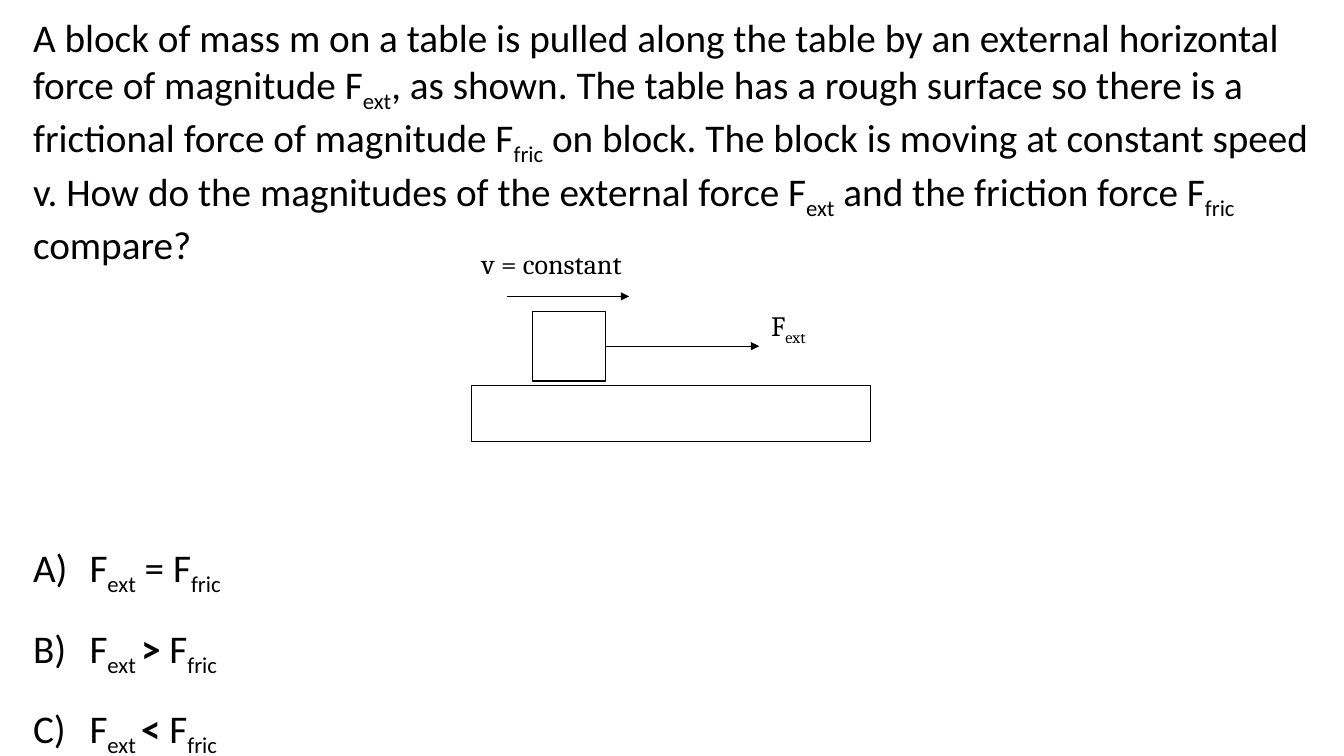
from lxml.etree import SubElement
from pptx import Presentation
from pptx.dml.color import RGBColor
from pptx.enum.shapes import MSO_CONNECTOR, MSO_SHAPE
from pptx.enum.text import MSO_AUTO_SIZE
from pptx.oxml.ns import qn
from pptx.util import Inches, Pt

# Content: each run is (text, style)
PLAIN, SUB, BOLD = "plain", "sub", "bold"
QUESTION = [
    ("A block of mass m on a table is pulled along the table by an external "
     "horizontal force of magnitude F", PLAIN),
    ("ext", SUB),
    (", as shown. The table has a rough surface so there is a frictional "
     "force of magnitude F", PLAIN),
    ("fric", SUB),
    (" on block. The block is moving at constant speed v. How do the "
     "magnitudes of the external force F", PLAIN),
    ("ext", SUB),
    (" and the friction force F", PLAIN),
    ("fric", SUB),
    (" compare?", PLAIN),
]
ANSWERS = [
    [("F", PLAIN), ("ext", SUB), (" = F", PLAIN), ("fric", SUB)],
    [("F", PLAIN), ("ext ", SUB), (">", BOLD), (" F", PLAIN), ("fric", SUB)],
    [("F", PLAIN), ("ext ", SUB), ("<", BOLD), (" F", PLAIN), ("fric", SUB)],
]
FORCE_LABEL = [("F", PLAIN), ("ext", SUB)]
SPEED_LABEL = [("v = constant", PLAIN)]

# Places: left, top, width, height
QUESTION_BOX = (0.23, 0.08, 12.87, 2.46)
ANSWER_BOX = (0.23, 5.08, 9.83, 2.22)
TABLE_TOP = (4.68, 3.82, 3.95, 0.56)
BLOCK = (5.28, 3.09, 0.73, 0.69)
FORCE_BOX = (7.55, 3.01, 0.98, 0.63)
SPEED_BOX = (4.68, 2.4, 3.17, 0.63)
FORCE_END = 7.53
SPEED_START, SPEED_END, SPEED_Y = 5.03, 6.24, 2.94

BLACK, WHITE = "000000", "FFFFFF"
LINE_WIDTH = Pt(0.75)
ANSWER_INDENT = Inches(0.56)


def color(hex_code):
    return RGBColor.from_string(hex_code)


def add_text(shapes, place, paragraphs, font, size):
    box = shapes.add_textbox(*map(Inches, place))
    frame = box.text_frame
    frame.word_wrap = True
    for index, runs in enumerate(paragraphs):
        paragraph = frame.paragraphs[0] if index == 0 else frame.add_paragraph()
        for text, style in runs:
            run = paragraph.add_run()
            run.text = text
            run.font.name = font
            run.font.size = Pt(size)
            run.font.bold = style == BOLD
            run.font.color.rgb = color(BLACK)
            if style == SUB:
                run.font._element.set("baseline", "-25000")
    return frame


def add_box(shapes, place):
    box = shapes.add_shape(MSO_SHAPE.RECTANGLE, *map(Inches, place))
    box.shadow.inherit = False
    box.fill.solid()
    box.fill.fore_color.rgb = color(WHITE)
    box.line.color.rgb = color(BLACK)
    box.line.width = LINE_WIDTH
    return box


def add_arrow(shapes, start, end, y):
    arrow = shapes.add_connector(
        MSO_CONNECTOR.STRAIGHT, *map(Inches, (start, y, end, y)))
    arrow.line.color.rgb = color(BLACK)
    arrow.line.width = LINE_WIDTH
    SubElement(arrow.line._get_or_add_ln(), qn("a:tailEnd"), type="triangle")
    SubElement(arrow._element.spPr, qn("a:effectLst"))
    return arrow


def letter_answers(frame):
    for paragraph in frame.paragraphs:
        paragraph.line_spacing = 1.5
        properties = paragraph._p.get_or_add_pPr()
        properties.set("marL", str(ANSWER_INDENT))
        properties.set("indent", str(-ANSWER_INDENT))
        SubElement(properties, qn("a:buFont"), typeface="+mj-lt")
        SubElement(properties, qn("a:buAutoNum"), type="alphaUcParenR")


def main():
    deck = Presentation()
    deck.slide_width, deck.slide_height = Inches(13.33), Inches(7.5)
    slide = deck.slides.add_slide(deck.slide_layouts[6])

    # Question and lettered answers
    question = add_text(slide.shapes, QUESTION_BOX, [QUESTION], "Calibri", 28)
    answers = add_text(slide.shapes, ANSWER_BOX, ANSWERS, "Calibri", 28)
    for frame in (question, answers):
        frame.auto_size = MSO_AUTO_SIZE.SHAPE_TO_FIT_TEXT
    letter_answers(answers)

    # Diagram: block on the table, pulled to the right
    diagram = slide.shapes.add_group_shape().shapes
    add_box(diagram, TABLE_TOP)
    block = add_box(diagram, BLOCK)
    left, top, width, height = BLOCK
    force = add_arrow(diagram, left + width, FORCE_END, top + height / 2)
    force.begin_connect(block, 3)
    add_text(diagram, FORCE_BOX, [FORCE_LABEL], "Cambria", 20)
    add_arrow(diagram, SPEED_START, SPEED_END, SPEED_Y)
    add_text(diagram, SPEED_BOX, [SPEED_LABEL], "Cambria", 20)

    deck.save("out.pptx")


if __name__ == "__main__":
    main()
